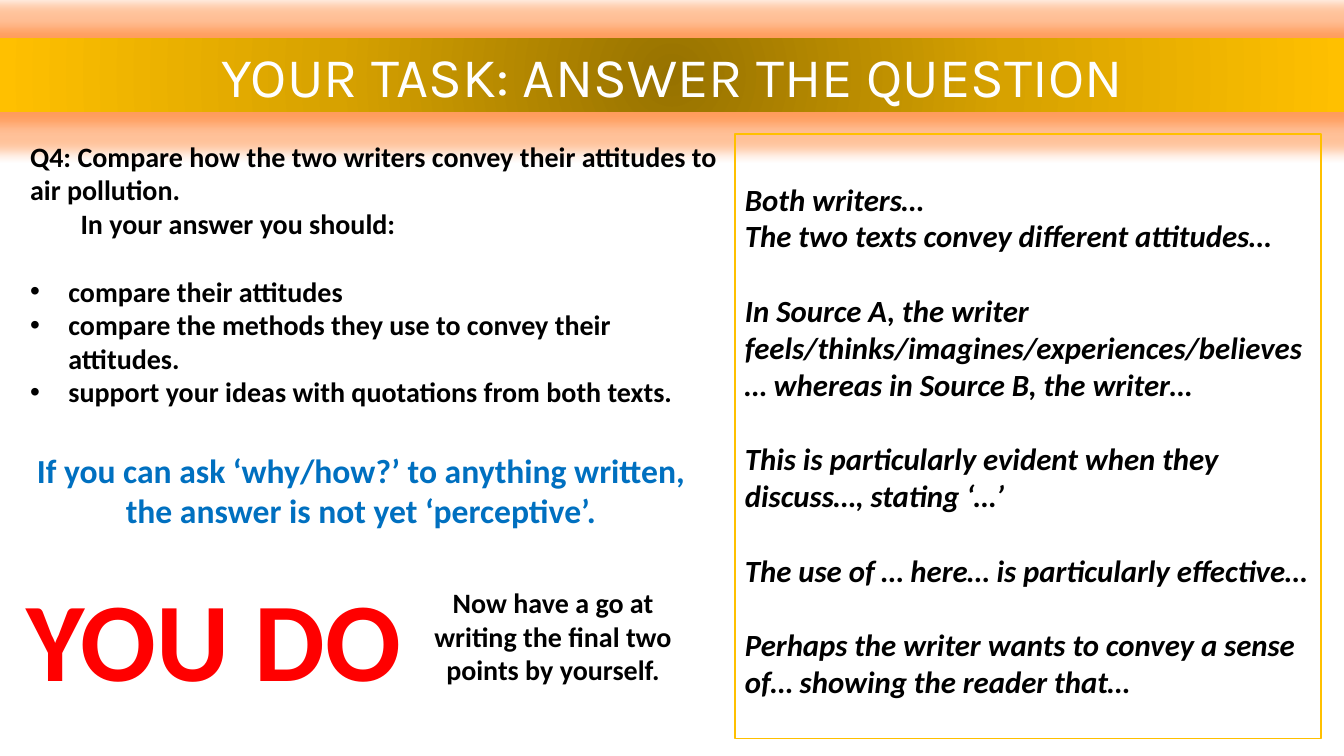
from dataclasses import dataclass

import pptx
import pptx.dml.color
import pptx.enum.shapes
import pptx.enum.text
import pptx.oxml
import pptx.oxml.ns
import pptx.util

ALIGN = pptx.enum.text.PP_ALIGN
ANCHOR = pptx.enum.text.MSO_ANCHOR


@dataclass(frozen=True)
class Theme:
    body_font: str = "Calibri"
    title_font: str = "Karla"
    black: str = "000000"
    white: str = "FFFFFF"
    blue: str = "0070C0"
    red: str = "FF0000"
    gold: str = "FFC000"
    mid_gold: str = "D7A200"
    dark_gold: str = "977200"
    glow: str = "FF6600"
    body: int = 20
    starter: int = 22
    hint: int = 24
    title: int = 40
    shout: int = 80


@dataclass(frozen=True)
class Area:
    left: float
    top: float
    width: float
    height: float


@dataclass(frozen=True)
class Style:
    size: int
    color: str
    font: str = "Calibri"
    bold: bool = True
    italic: bool = False
    align: ALIGN = ALIGN.LEFT


@dataclass(frozen=True)
class Para:
    text: str
    bullet: bool = False
    gap: float = 0
    indent: float = 0


@dataclass(frozen=True)
class Note:
    area: Area
    style: Style
    paras: tuple[Para, ...]


THEME = Theme()
WIDTH = pptx.util.Inches(13.33)
HEIGHT = pptx.util.Inches(7.5)
LINE_FACTOR = 1.22
HANG = 0.38

BANNER = Note(
    Area(0, 5.07, 100, 9.73),
    Style(THEME.title, THEME.white, THEME.title_font, bold=False, align=ALIGN.CENTER),
    (Para("YOUR TASK: ANSWER THE QUESTION"),),
)

STARTERS = Note(
    Area(54.69, 17.73, 43.59, 80),
    Style(THEME.starter, THEME.black, italic=True),
    (
        Para("Both writers…"),
        Para("The two texts convey different attitudes…"),
        Para("In Source A, the writer feels/thinks/imagines/experiences/believes… "
             "whereas in Source B, the writer…", gap=1),
        Para("This is particularly evident when they discuss…, stating ‘…’", gap=1),
        Para("The use of … here… is particularly effective…", gap=1),
        Para("Perhaps the writer wants to convey a sense of… "
             "showing the reader that…", gap=1),
    ),
)

NOTES = (
    Note(
        Area(1.5, 17.73, 53.19, 37.2),
        Style(THEME.body, THEME.black),
        (
            Para("Q4: Compare how the two writers convey their attitudes to air pollution."),
            Para("In your answer you should:", indent=0.5),
            Para("compare their attitudes", bullet=True, gap=1),
            Para("compare the methods they use to convey their attitudes.", bullet=True),
            Para("support your ideas with quotations from both texts.", bullet=True),
        ),
    ),
    Note(
        Area(1.5, 58.8, 50.71, 12.13),
        Style(THEME.hint, THEME.blue, align=ALIGN.CENTER),
        (Para("If you can ask ‘why/how?’ to anything written, "
              "the answer is not yet ‘perceptive’."),),
    ),
    Note(
        Area(0, 74.67, 31.88, 19.33),
        Style(THEME.shout, THEME.red, align=ALIGN.CENTER),
        (Para("YOU DO"),),
    ),
    Note(
        Area(30.08, 76.8, 22.13, 14.8),
        Style(THEME.body, THEME.black, align=ALIGN.CENTER),
        (Para("Now have a go at writing the final two points by yourself."),),
    ),
)


def place(area: Area) -> tuple[int, int, int, int]:
    return (
        round(WIDTH * area.left / 100),
        round(HEIGHT * area.top / 100),
        round(WIDTH * area.width / 100),
        round(HEIGHT * area.height / 100),
    )


def rgb(color: str) -> pptx.dml.color.RGBColor:
    return pptx.dml.color.RGBColor.from_string(color)


def xml(text: str):
    return pptx.oxml.parse_xml(text.replace(">", f" {pptx.oxml.ns.nsdecls('a')}>", 1))


def set_indent(p, para: Para) -> None:
    pPr = p._p.get_or_add_pPr()
    left = HANG if para.bullet else para.indent
    pPr.set("marL", str(pptx.util.Inches(left)))
    if para.bullet:
        pPr.set("indent", str(-pptx.util.Inches(HANG)))
        pPr.append(xml('<a:buFont typeface="Arial"></a:buFont>'))
        pPr.append(xml('<a:buChar char="•"></a:buChar>'))


def write(tf, note: Note) -> None:
    style = note.style
    tf.word_wrap = True
    tf.text = "\n".join(para.text for para in note.paras)
    for p, para in zip(tf.paragraphs, note.paras):
        p.alignment = style.align
        if para.gap:
            p.space_before = pptx.util.Pt(round(para.gap * style.size * LINE_FACTOR, 1))
        set_indent(p, para)
        for r in p.runs:
            r.font.name = style.font
            r.font.size = pptx.util.Pt(style.size)
            r.font.bold = style.bold
            r.font.italic = style.italic
            r.font.color.rgb = rgb(style.color)


def add_rectangle(s, note: Note):
    sp = s.shapes.add_shape(pptx.enum.shapes.MSO_SHAPE.RECTANGLE, *place(note.area))
    sp.shadow.inherit = False
    sp.text_frame.vertical_anchor = ANCHOR.MIDDLE
    write(sp.text_frame, note)
    return sp


def add_banner(s, note: Note) -> None:
    sp = add_rectangle(s, note)
    sp.line.fill.background()
    sp.fill.gradient()
    spPr = sp.element.spPr
    shades = ((0, THEME.dark_gold), (50, THEME.mid_gold), (100, THEME.gold))
    stops = "".join(
        f'<a:gs pos="{pos * 1000}"><a:srgbClr val="{color}"/></a:gs>'
        for pos, color in shades
    )
    spPr.replace(spPr.find(pptx.oxml.ns.qn("a:gradFill")), xml(
        f'<a:gradFill rotWithShape="1"><a:gsLst>{stops}</a:gsLst><a:path path="circle">'
        '<a:fillToRect l="50000" t="50000" r="50000" b="50000"/></a:path></a:gradFill>'
    ))
    spPr.find(pptx.oxml.ns.qn("a:effectLst")).append(xml(
        f'<a:glow rad="{pptx.util.Pt(18)}"><a:srgbClr val="{THEME.glow}">'
        '<a:alpha val="40000"/></a:srgbClr></a:glow>'
    ))


def add_frame(s, note: Note) -> None:
    sp = add_rectangle(s, note)
    sp.fill.background()
    sp.line.color.rgb = rgb(THEME.gold)
    sp.line.width = pptx.util.Pt(1)
    sp.text_frame.margin_top = pptx.util.Inches(0.12)


def add_note(s, note: Note) -> None:
    tf = s.shapes.add_textbox(*place(note.area)).text_frame
    write(tf, note)
    tf.auto_size = pptx.enum.text.MSO_AUTO_SIZE.SHAPE_TO_FIT_TEXT


def main() -> None:
    prs = pptx.Presentation()
    prs.slide_width, prs.slide_height = WIDTH, HEIGHT
    s = prs.slides.add_slide(prs.slide_layouts[6])
    add_banner(s, BANNER)
    add_frame(s, STARTERS)
    for note in NOTES:
        add_note(s, note)
    prs.save("out.pptx")


if __name__ == "__main__":
    main()
